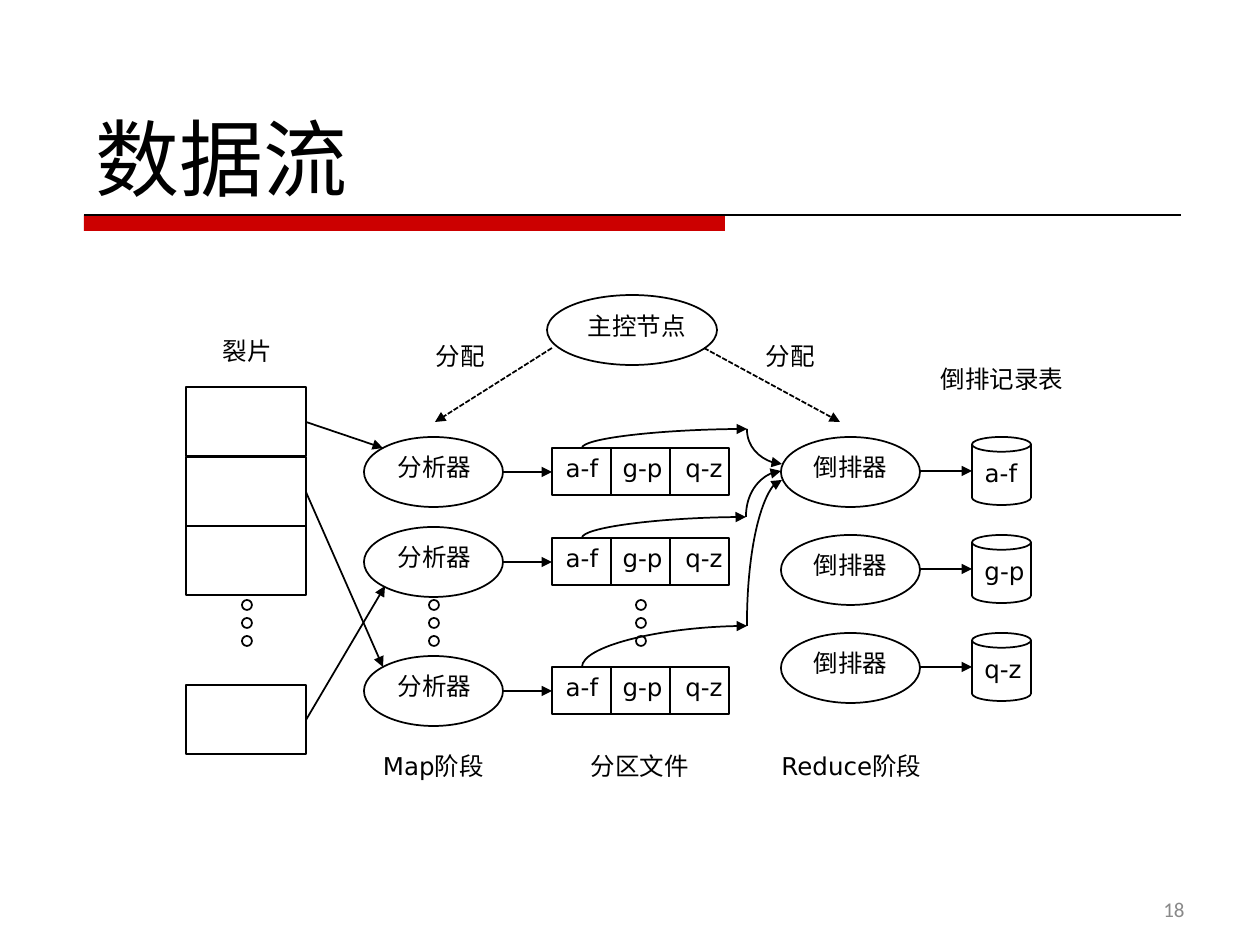
from lxml.etree import SubElement
from pptx import Presentation
from pptx.dml.color import RGBColor
from pptx.enum.dml import MSO_LINE
from pptx.enum.shapes import MSO_CONNECTOR, MSO_SHAPE
from pptx.enum.text import MSO_ANCHOR, MSO_AUTO_SIZE, PP_ALIGN
from pptx.oxml.ns import qn
from pptx.util import Pt

SCALE = 914400 / 126
color = RGBColor.from_string


def px(*values):
    return [round(value * SCALE) for value in values]


def style_line(connector, width, arrow=True, dashed=False):
    connector.line.color.rgb = color("000000")
    connector.line.width = Pt(width)
    if dashed:
        connector.line.dash_style = MSO_LINE.SQUARE_DOT
    properties = connector._element.spPr
    if arrow:
        SubElement(properties.find(qn("a:ln")), qn("a:tailEnd"), type="triangle")
    SubElement(properties, qn("a:effectLst"))


presentation = Presentation()
presentation.slide_width, presentation.slide_height = px(1260, 945)
slide = presentation.slides.add_slide(presentation.slide_layouts[5])

bar = slide.shapes.add_shape(MSO_SHAPE.RECTANGLE, *px(84, 215, 641, 16))
bar.shadow.inherit = False
bar.fill.solid()
bar.fill.fore_color.rgb = color("CC0000")
bar.line.fill.background()
rule = slide.shapes.add_connector(MSO_CONNECTOR.STRAIGHT, *px(84, 215, 1181, 215))
style_line(rule, 0.75, arrow=False)

title = slide.shapes.title
title.left, title.top, title.width, title.height = px(83, 21, 1191, 193)
title.text_frame.text = "数据流"
title.text_frame.vertical_anchor = MSO_ANCHOR.BOTTOM
paragraph = title.text_frame.paragraphs[0]
paragraph.alignment = PP_ALIGN.LEFT
paragraph.font.size = Pt(48)
paragraph.font.name = "Noto Sans CJK JP"
paragraph.font.color.rgb = color("000000")

page_number = slide.shapes.add_textbox(*px(903, 892, 294, 34))
page_number.text_frame.word_wrap = True
page_number.text_frame.vertical_anchor = MSO_ANCHOR.MIDDLE
page_number.text_frame.text = "18"
paragraph = page_number.text_frame.paragraphs[0]
paragraph.alignment = PP_ALIGN.RIGHT
paragraph.font.size = Pt(12)
paragraph.font.name = "Calibri"
paragraph.font.color.rgb = color("898989")

shapes = [(MSO_SHAPE.OVAL, 547, 295, 170, 70)]
labels = [
    ("裂片", 203, 330, 89),
    ("主控节点", 557, 305, 160),
    ("分配", 416, 335, 89),
    ("分配", 746, 335, 89),
    ("倒排记录表", 910, 358, 184),
    ("Map阶段", 359, 745, 149),
    ("分区文件", 564, 745, 152),
    ("Reduce阶段", 759, 745, 185),
]
arrows = [
    (306, 422, 383, 448),
    (306, 492, 383, 667),
    (306, 720, 385, 586),
]
partitions = [("a-f", 552, 60), ("g-p", 609, 67), ("q-z", 672, 64)]

for top in (387, 457, 526, 685):
    shapes.append((MSO_SHAPE.RECTANGLE, 186, top, 120, 69))

for left in (242, 429, 636):
    for row in range(3):
        shapes.append((MSO_SHAPE.OVAL, left, 600 + 18 * row, 10, 10))

for top in (437, 527, 656):
    shapes.append((MSO_SHAPE.OVAL, 364, top, 139, 70))
    labels.append(("分析器", 374, top + 9, 121))
    arrows.append((503, top + 35, 552, top + 35))
    for column, (name, left, width) in enumerate(partitions):
        shapes.append((MSO_SHAPE.RECTANGLE, 552 + 59 * column, top + 11, 59, 47))
        labels.append((name, left, top + 10, width))

for row, (name, _, width) in enumerate(partitions):
    top = 437 + 98 * row
    shapes.append((MSO_SHAPE.OVAL, 781, top, 139, 70))
    shapes.append((MSO_SHAPE.CAN, 972, top, 59, 68))
    labels.append(("倒排器", 790, top + 9, 121))
    labels.append((name, 971, top + 15, width))
    arrows.append((920, top + 34, 972, top + 34))

diagram = slide.shapes.add_group_shape().shapes

for kind, *box in shapes:
    shape = diagram.add_shape(kind, *px(*box))
    shape.shadow.inherit = False
    shape.fill.solid()
    shape.fill.fore_color.rgb = color("FFFFFF")
    shape.line.color.rgb = color("000000")
    shape.line.width = Pt(1)

for text, left, top, width in labels:
    label = diagram.add_textbox(*px(left, top, width, 50))
    label.text_frame.word_wrap = text == "主控节点"
    label.text_frame.auto_size = MSO_AUTO_SIZE.SHAPE_TO_FIT_TEXT
    label.text_frame.text = text
    paragraph = label.text_frame.paragraphs[0]
    paragraph.alignment = PP_ALIGN.CENTER
    paragraph.font.size = Pt(14)
    paragraph.font.name = "DejaVu Sans"
    paragraph.font.color.rgb = color("000000")

for points in arrows:
    style_line(diagram.add_connector(MSO_CONNECTOR.STRAIGHT, *px(*points)), 1)

for points in ((552, 348, 435, 422), (704, 348, 840, 422)):
    assignment = diagram.add_connector(MSO_CONNECTOR.STRAIGHT, *px(*points))
    style_line(assignment, 1, dashed=True)

curves = [
    (582, 448, 747, 429), (747, 429, 782, 464),
    (582, 538, 746, 517), (746, 517, 781, 471),
    (582, 667, 747, 626), (747, 626, 782, 480),
]
for start_x, start_y, end_x, end_y in curves:
    center_x, center_y = (start_x + end_x) / 2, (start_y + end_y) / 2
    half_width, half_height = abs(end_y - start_y) / 2, (end_x - start_x) / 2
    rising = end_y < start_y
    side = half_height if rising else -half_height
    curve = diagram.add_connector(
        MSO_CONNECTOR.CURVE,
        *px(center_x + half_width, center_y + side, center_x - half_width, center_y - side),
    )
    properties = curve._element.spPr
    properties.find(qn("a:xfrm")).set("rot", str((90 if rising else 270) * 60000))
    properties.find(qn("a:prstGeom")).set("prst", "curvedConnector2")
    style_line(curve, 1)

presentation.save("out.pptx")
